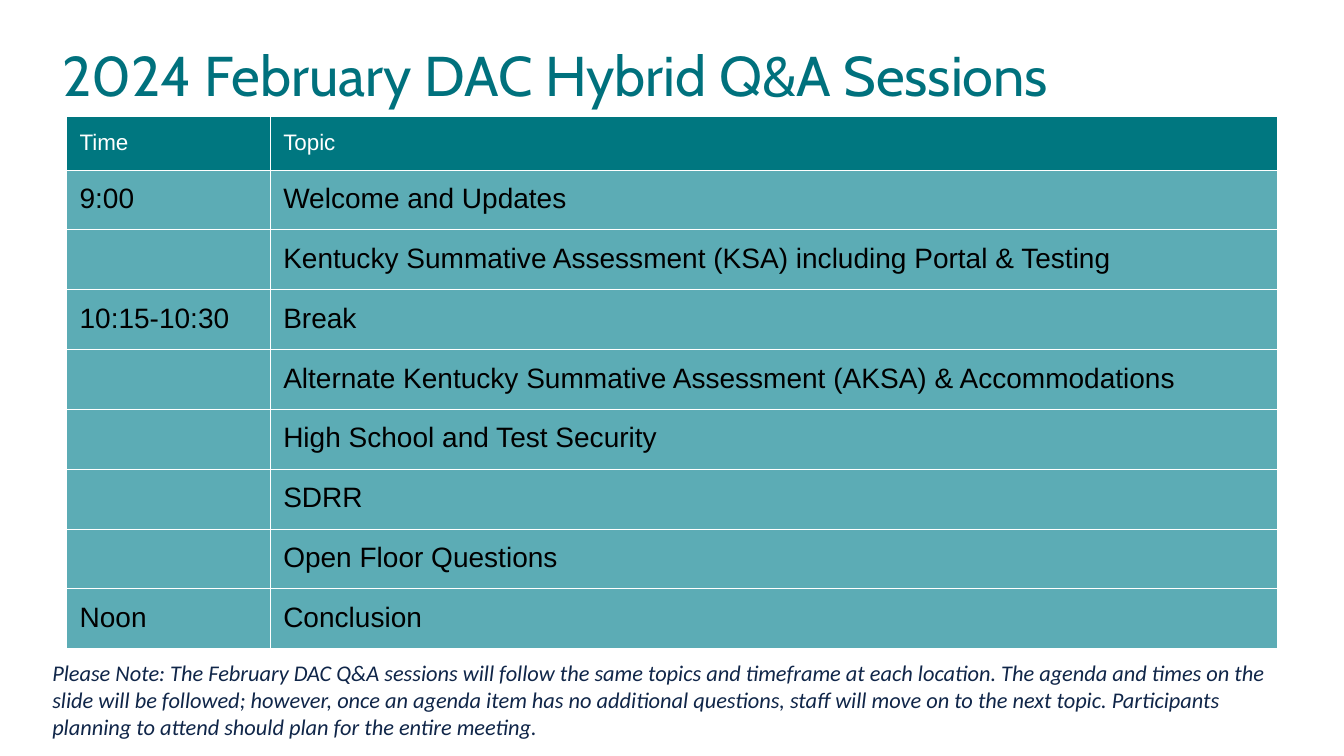
from dataclasses import dataclass

from lxml.etree import SubElement
from pptx import Presentation
from pptx.dml.color import RGBColor as Color
from pptx.enum.text import MSO_ANCHOR as Anchor
from pptx.oxml.ns import qn
from pptx.util import Inches, Pt


@dataclass(frozen=True)
class Theme:
    title: dict
    header: dict
    body: dict
    note: dict
    header_fill: str = "007780"
    body_fill: str = "5CACB5"
    border: str = "FFFFFF"
    border_width: float = 0.75


THEME = Theme(
    title={"name": "Cabin", "size": Pt(40), "color": "00717D"},
    header={"name": "Arial", "size": Pt(16), "color": "FFFFFF"},
    body={"name": "Arial", "size": Pt(20), "color": "000000"},
    note={"name": "Calibri", "size": Pt(16), "color": "102649", "italic": True},
)

WIDTH, HEIGHT = Inches(13.33), Inches(7.5)
COLUMNS = [2.02, 9.99]
HEADER_HEIGHT, ROW_HEIGHT = 0.52, 0.58
CELL_MARGIN = 0.13

TITLE = "2024 February DAC Hybrid Q&A Sessions"
AGENDA = [
    ("Time", "Topic"),
    ("9:00", "Welcome and Updates"),
    ("", "Kentucky Summative Assessment (KSA) including Portal & Testing"),
    ("10:15-10:30", "Break"),
    ("", "Alternate Kentucky Summative Assessment (AKSA) & Accommodations"),
    ("", "High School and Test Security"),
    ("", "SDRR"),
    ("", "Open Floor Questions"),
    ("Noon", "Conclusion"),
]
NOTE = (
    "Please Note: The February DAC Q&A sessions will follow the same topics and "
    "timeframe at each location. The agenda and times on the slide will be followed; "
    "however, once an agenda item has no additional questions, staff will move on to "
    "the next topic. Participants planning to attend should plan for the entire meeting."
)


def set_text(frame, text, style):
    paragraph = frame.paragraphs[0]
    paragraph.text = text
    for name, value in style.items():
        if name == "color":
            paragraph.font.color.rgb = Color.from_string(value)
        else:
            setattr(paragraph.font, name, value)


def add_text(slide, box, text, style, **frame_format):
    shape = slide.shapes.add_textbox(*(Inches(length) for length in box))
    frame = shape.text_frame
    for name, value in {"word_wrap": True, **frame_format}.items():
        setattr(frame, name, value)
    set_text(frame, text, style)


def add_borders(cell):
    properties = cell._tc.get_or_add_tcPr()
    for side in ("a:lnL", "a:lnR", "a:lnT", "a:lnB"):
        line = SubElement(properties, qn(side), w=str(Pt(THEME.border_width)))
        fill = SubElement(line, qn("a:solidFill"))
        SubElement(fill, qn("a:srgbClr"), val=THEME.border)


def format_cell(cell, text, style, fill):
    for side in ("left", "right", "top", "bottom"):
        setattr(cell, f"margin_{side}", Inches(CELL_MARGIN))
    set_text(cell.text_frame, text, style)
    add_borders(cell)
    cell.fill.solid()
    cell.fill.fore_color.rgb = Color.from_string(fill)


def add_agenda(slide, left, top):
    heights = [HEADER_HEIGHT] + [ROW_HEIGHT] * (len(AGENDA) - 1)
    table = slide.shapes.add_table(
        len(heights), len(COLUMNS), Inches(left), Inches(top),
        Inches(sum(COLUMNS)), Inches(sum(heights)),
    ).table
    for column, width in zip(table.columns, COLUMNS):
        column.width = Inches(width)
    for index, (row, height, texts) in enumerate(zip(table.rows, heights, AGENDA)):
        row.height = Inches(height)
        style, fill = (
            (THEME.body, THEME.body_fill) if index else (THEME.header, THEME.header_fill)
        )
        for cell, text in zip(row.cells, texts):
            format_cell(cell, text, style, fill)


def main():
    presentation = Presentation()
    presentation.slide_width, presentation.slide_height = WIDTH, HEIGHT
    slide = presentation.slides.add_slide(presentation.slide_layouts[6])

    # Title
    add_text(slide, (0.52, 0.32, 12.42, 0.84), TITLE, THEME.title,
             vertical_anchor=Anchor.MIDDLE)
    # Agenda table
    add_agenda(slide, 0.66, 1.16)
    # Closing note
    add_text(slide, (0.42, 6.49, 12.31, 0.91), NOTE, THEME.note)

    presentation.save("out.pptx")


if __name__ == "__main__":
    main()
